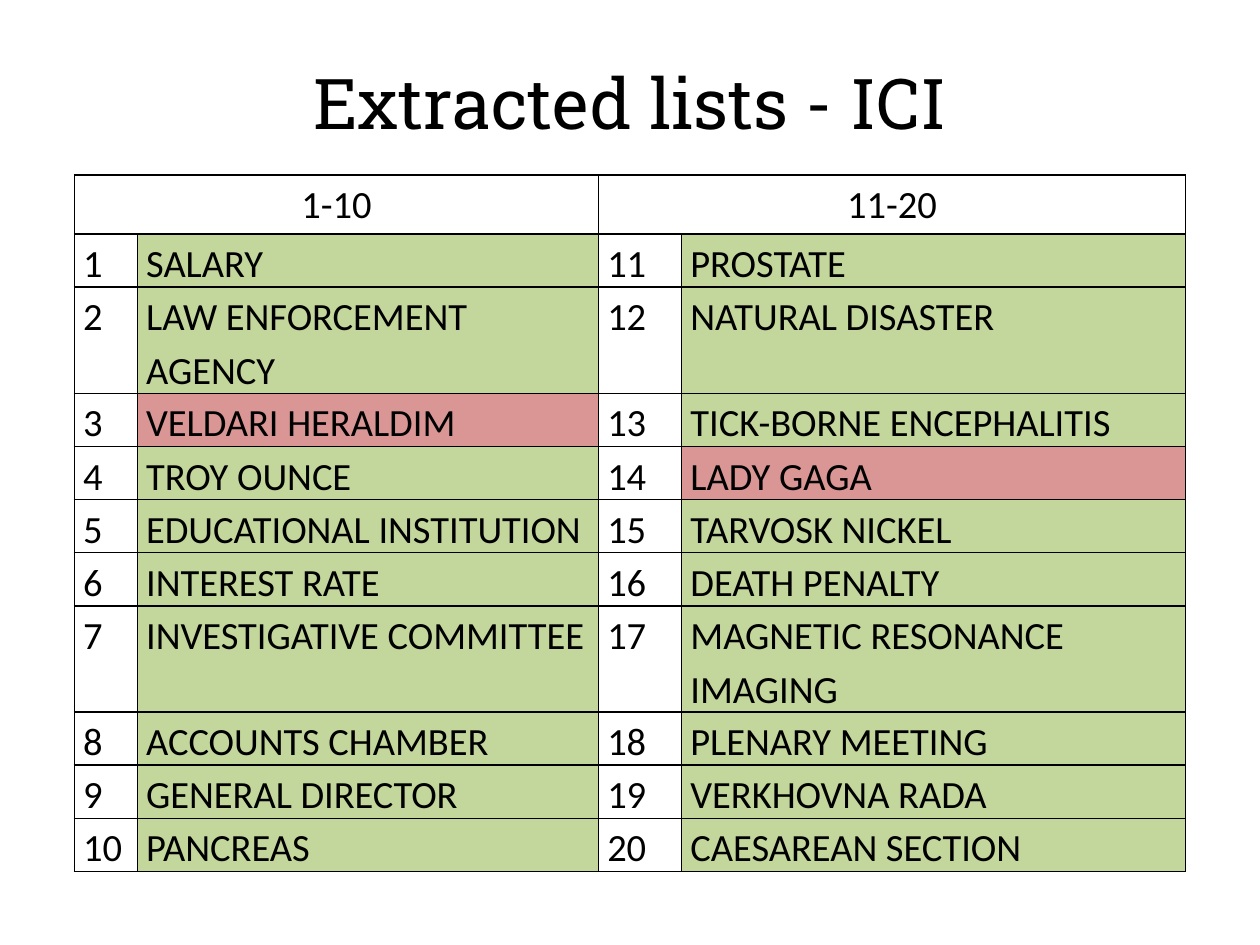
from lxml import etree
from pptx import Presentation
from pptx.dml.color import RGBColor
from pptx.enum.text import MSO_ANCHOR, PP_ALIGN
from pptx.oxml.ns import qn
from pptx.util import Inches, Pt

CENTER, LEFT = PP_ALIGN.CENTER, PP_ALIGN.LEFT
MIDDLE = MSO_ANCHOR.MIDDLE
BLACK = RGBColor(0x00, 0x00, 0x00)
GREEN = RGBColor(0xC3, 0xD6, 0x9B)
RED = RGBColor(0xD9, 0x96, 0x94)

COLUMN_WIDTHS = [0.5, 3.66, 0.66, 4]
ROW_HEIGHT = 0.41
HEADERS = ["1-10", "11-20"]
TERMS = [
    "SALARY", "LAW ENFORCEMENT AGENCY", "VELDARI HERALDIM", "TROY OUNCE",
    "EDUCATIONAL INSTITUTION", "INTEREST RATE", "INVESTIGATIVE COMMITTEE",
    "ACCOUNTS CHAMBER", "GENERAL DIRECTOR", "PANCREAS",
    "PROSTATE", "NATURAL DISASTER", "TICK-BORNE ENCEPHALITIS", "LADY GAGA",
    "TARVOSK NICKEL", "DEATH PENALTY", "MAGNETIC RESONANCE IMAGING",
    "PLENARY MEETING", "VERKHOVNA RADA", "CAESAREAN SECTION",
]
WRONG_RANKS = {3, 14}
RANKS_PER_LIST = 10


def write_text(text_frame, text, font_name, size, alignment):
    text_frame.text = text
    paragraph = text_frame.paragraphs[0]
    paragraph.alignment = alignment
    font = paragraph.runs[0].font
    font.name = font_name
    font.size = Pt(size)
    font.color.rgb = BLACK
    return paragraph


def add_borders(cell):
    properties = cell._tc.get_or_add_tcPr()
    for index, side in enumerate(("lnL", "lnR", "lnT", "lnB")):
        line = etree.Element(qn(f"a:{side}"), w=str(Pt(1)))
        fill = etree.SubElement(line, qn("a:solidFill"))
        etree.SubElement(fill, qn("a:srgbClr"), val=str(BLACK))
        properties.insert(index, line)


presentation = Presentation()
presentation.slide_width = Inches(10)
presentation.slide_height = Inches(7.5)
slide = presentation.slides.add_slide(presentation.slide_layouts[6])

# Title
title = slide.shapes.add_textbox(Inches(0.5), Inches(0.3), Inches(9), Inches(1.01))
title.text_frame.word_wrap = True
title.text_frame.vertical_anchor = MIDDLE
write_text(title.text_frame, "Extracted lists - ICI", "Roboto Slab", 40, CENTER)

# Table grid
row_count = RANKS_PER_LIST + 1
table = slide.shapes.add_table(
    row_count, len(COLUMN_WIDTHS), Inches(0.59), Inches(1.39),
    Inches(sum(COLUMN_WIDTHS)), Inches(ROW_HEIGHT * row_count),
).table
table.first_row = False
table.horz_banding = False
for column, width in zip(table.columns, COLUMN_WIDTHS):
    column.width = Inches(width)
for row in table.rows:
    row.height = Inches(ROW_HEIGHT)
for cell in table.iter_cells():
    cell.fill.background()
    add_borders(cell)

# Header cells, each over a rank and a term column
for index, header in enumerate(HEADERS):
    cell = table.cell(0, 2 * index)
    cell.merge(table.cell(0, 2 * index + 1))
    write_text(cell.text_frame, header, "Calibri", 22, CENTER)

# Ranked terms, green when correct and red when wrong
for index, term in enumerate(TERMS):
    rank = index + 1
    list_index, row_index = divmod(index, RANKS_PER_LIST)
    rank_cell = table.cell(row_index + 1, 2 * list_index)
    term_cell = table.cell(row_index + 1, 2 * list_index + 1)
    for cell, text in ((rank_cell, str(rank)), (term_cell, term)):
        cell.margin_left = cell.margin_right = Inches(0.07)
        cell.margin_top = cell.margin_bottom = 0
        paragraph = write_text(cell.text_frame, text, "Calibri", 22, LEFT)
        paragraph.line_spacing = 1.15
    term_cell.fill.solid()
    term_cell.fill.fore_color.rgb = RED if rank in WRONG_RANKS else GREEN

presentation.save("out.pptx")
